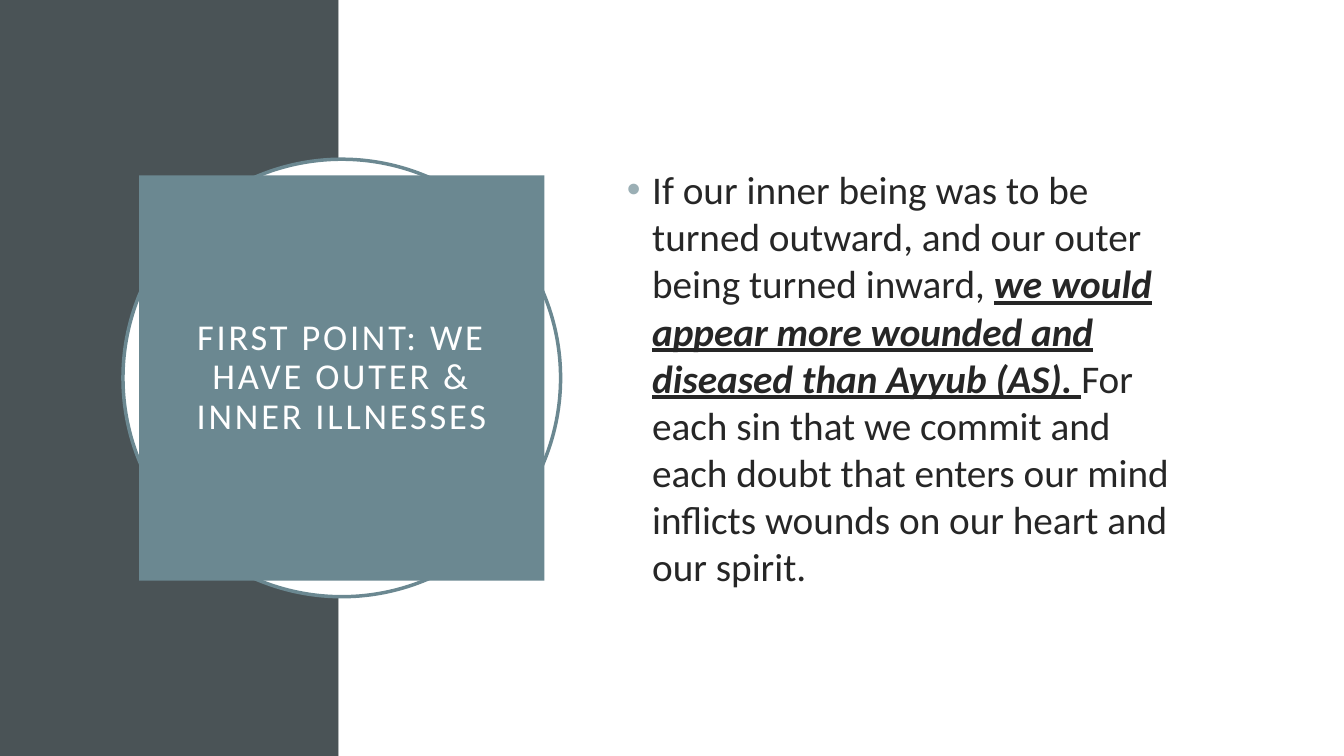
from lxml.etree import SubElement
from pptx import Presentation
from pptx.dml.color import RGBColor
from pptx.enum.shapes import MSO_SHAPE as Shape
from pptx.enum.text import MSO_ANCHOR as Anchor, PP_ALIGN as Align
from pptx.oxml.ns import qn
from pptx.util import Inches, Pt

COLORS = {
    "slate": "4A5356",
    "teal": "6B8891",
    "bullet": "9BAFB5",
    "ink": "262626",
    "white": "FFFFFF",
}
FONT = "Calibri"
SLIDE_W, SLIDE_H = 13.33, 7.5
BAND_W = 3.36
TITLE = "FIRST POINT: WE HAVE OUTER & INNER ILLNESSES"
PASSAGE = [
    ("If our inner being was to be turned outward, and our outer being turned inward, ", False),
    ("we would appear more wounded and diseased than Ayyub (AS). ", True),
    ("For each sin that we commit and each doubt that enters our mind "
     "inflicts wounds on our heart and our spirit.", False),
]


def rgb(name):
    """Return the named palette colour."""
    return RGBColor.from_string(COLORS[name])


def add_plain(slide, kind, box, fill, line=None):
    """Add a flat shape in box, outlined only when a line colour is given."""
    shape = slide.shapes.add_shape(kind, *map(Inches, box))
    shape.shadow.inherit = False
    shape.fill.solid()
    shape.fill.fore_color.rgb = rgb(fill)
    if line:
        shape.line.color.rgb = rgb(line)
        shape.line.width = Pt(2.5)
    else:
        shape.line.fill.background()
    return shape


def style_font(paragraph, size, color):
    """Set the typeface, size and colour of a paragraph."""
    paragraph.font.name = FONT
    paragraph.font.size = Pt(size)
    paragraph.font.color.rgb = rgb(color)


def add_backdrop(slide, box):
    """Split the box into a dark band and a white panel."""
    left, top, width, height = box
    add_plain(slide, Shape.RECTANGLE, (left, top, BAND_W, height), "slate")
    add_plain(slide, Shape.RECTANGLE, (left + BAND_W, top, width - BAND_W, height), "white")


def add_title_badge(slide, box):
    """Draw the ringed title block, its square centred in the box."""
    left, top, width, height = box
    gap = 0.16
    add_plain(slide, Shape.OVAL, box, "white", "teal")
    square = (left + gap, top + gap, width - 2 * gap, height - 2 * gap)
    frame = add_plain(slide, Shape.RECTANGLE, square, "teal").text_frame
    frame.word_wrap = True
    frame.vertical_anchor = Anchor.MIDDLE
    frame.margin_left = frame.margin_right = Inches(0.2)
    frame.margin_top = frame.margin_bottom = Inches(0.2)
    title = frame.paragraphs[0]
    title.alignment = Align.CENTER
    title.line_spacing = 0.9
    title_run = title.add_run()
    title_run.text = TITLE
    title_run.font._element.set("spc", "200")
    style_font(title, 26, "white")


def add_passage(slide, box):
    """Write the bulleted passage, vertically centred in the box."""
    frame = slide.shapes.add_textbox(*map(Inches, box)).text_frame
    frame.word_wrap = True
    frame.vertical_anchor = Anchor.MIDDLE
    passage = frame.paragraphs[0]
    props = passage._p.get_or_add_pPr()
    props.set("marL", str(Inches(0.25)))
    props.set("indent", str(-Inches(0.25)))
    bullet_color = SubElement(props, qn("a:buClr"))
    SubElement(bullet_color, qn("a:srgbClr"), val=COLORS["bullet"])
    SubElement(props, qn("a:buFont"), typeface="Arial")
    SubElement(props, qn("a:buChar"), char="•")
    style_font(passage, 28, "ink")
    for text, stressed in PASSAGE:
        phrase = passage.add_run()
        phrase.text = text
        if stressed:
            phrase.font.bold = phrase.font.italic = phrase.font.underline = True


def main():
    """Build the slide and save it."""
    deck = Presentation()
    deck.slide_width, deck.slide_height = Inches(SLIDE_W), Inches(SLIDE_H)
    slide = deck.slides.add_slide(deck.slide_layouts[6])
    add_backdrop(slide, (0, 0, SLIDE_W, SLIDE_H))
    add_title_badge(slide, (1.22, 1.58, 4.34, 4.34))
    add_passage(slide, (6.12, 1.53, 5.82, 4.43))
    deck.save("out.pptx")


if __name__ == "__main__":
    main()
